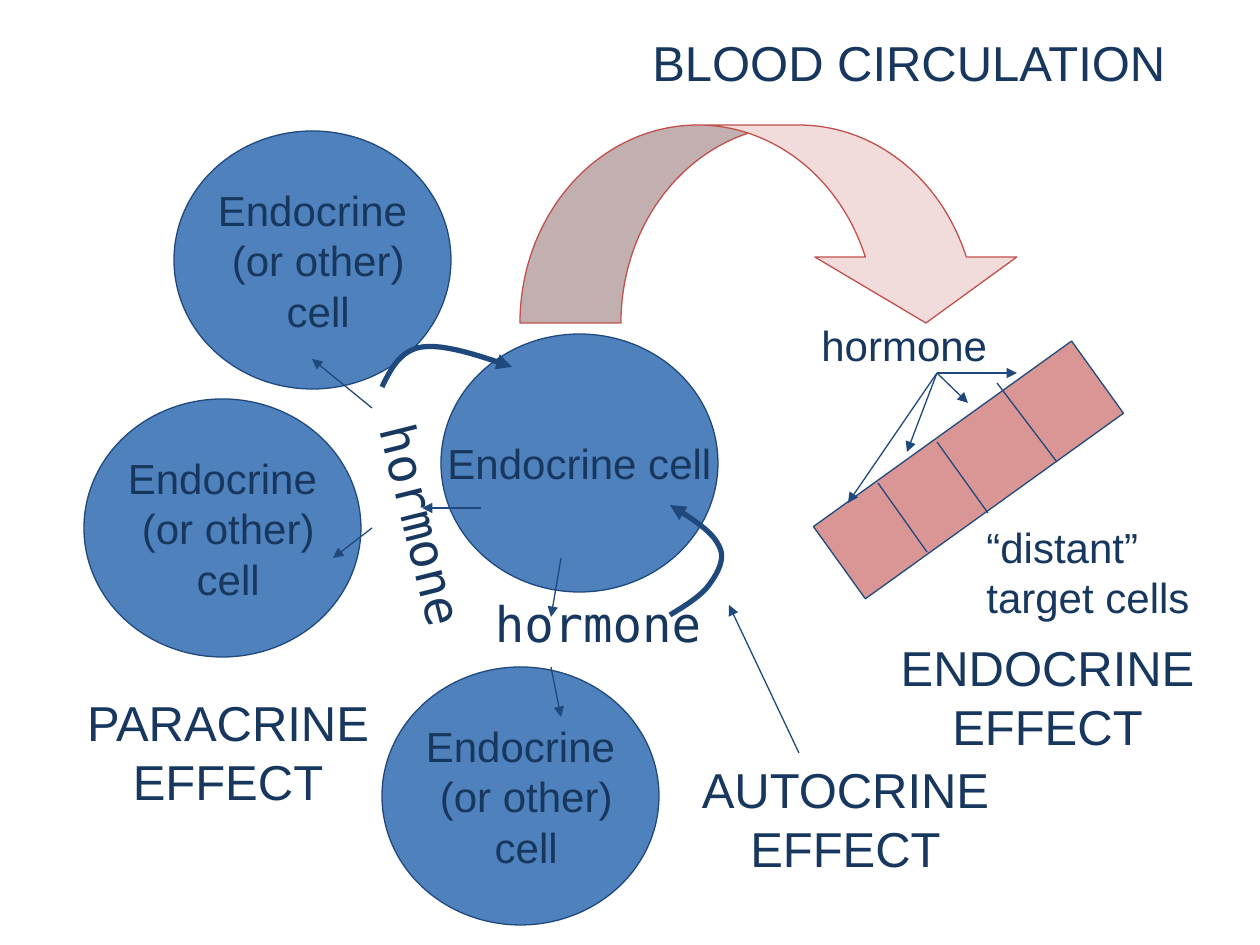
import dataclasses

import pptx
import pptx.dml.color
import pptx.enum.shapes
import pptx.enum.text
import pptx.oxml.ns
import pptx.util
from lxml import etree

EMU_PER_PX = 914400 / 126
SHAPES = pptx.enum.shapes.MSO_SHAPE
ALIGN = pptx.enum.text.PP_ALIGN
ANCHOR = pptx.enum.text.MSO_ANCHOR


@dataclasses.dataclass(frozen=True)
class Theme:
    text: str = "17375E"
    outline: str = "1F497D"
    cell: str = "4F81BD"
    target: str = "D99694"
    blood: str = "F2DCDB"
    blood_outline: str = "C0504D"
    font: str = "Arial"
    hormone_font: str = "DejaVu Sans Mono"
    body: int = 24
    heading: int = 28
    thin: float = 0.75
    thick: float = 3


THEME = Theme()
CELL_SIZE = (277, 258)
OTHER_CELL = ["Endocrine", " (or other)", " cell"]


def px(*lengths):
    return [round(length * EMU_PER_PX) for length in lengths]


def color(value):
    return pptx.dml.color.RGBColor.from_string(value)


def set_line(shape, line_color=THEME.outline, width=THEME.thin, arrow=False):
    shape.line.color.rgb = color(line_color)
    shape.line.width = pptx.util.Pt(width)
    if arrow:
        line = shape.line._get_or_add_ln()
        etree.SubElement(line, pptx.oxml.ns.qn("a:tailEnd"), type="triangle")


def write(shape, lines, size, font, align):
    frame = shape.text_frame
    frame.word_wrap = False
    frame.text = "\n".join(lines)
    for paragraph in frame.paragraphs:
        paragraph.alignment = align
        paragraph.font.name = font
        paragraph.font.size = pptx.util.Pt(size)
        paragraph.font.color.rgb = color(THEME.text)


def add_preset(slide, kind, box, fill, line_color=THEME.outline):
    shape = slide.shapes.add_shape(kind, *px(*box))
    shape.shadow.inherit = False
    shape.fill.solid()
    shape.fill.fore_color.rgb = color(fill)
    set_line(shape, line_color)
    return shape


def add_cell(slide, left, top, lines):
    cell = add_preset(slide, SHAPES.OVAL, (left, top, *CELL_SIZE), THEME.cell)
    cell.text_frame.vertical_anchor = ANCHOR.MIDDLE
    write(cell, lines, THEME.body, THEME.font, ALIGN.CENTER)


def add_label(slide, box, lines, size, font=THEME.font, align=ALIGN.LEFT, rotation=0):
    label = slide.shapes.add_textbox(*px(*box))
    label.rotation = rotation
    write(label, lines, size, font, align)


def add_line(slide, start, end, arrow=False):
    connector = slide.shapes.add_connector(
        pptx.enum.shapes.MSO_CONNECTOR.STRAIGHT, *px(*start, *end))
    set_line(connector, arrow=arrow)
    etree.SubElement(connector._element.spPr, pptx.oxml.ns.qn("a:effectLst"))


def curve_points(controls, steps=12):
    for first in range(0, len(controls) - 1, 3):
        segment = controls[first:first + 4]
        for step in range(1, steps + 1):
            t = step / steps
            weights = ((1 - t) ** 3, 3 * t * (1 - t) ** 2, 3 * t * t * (1 - t), t ** 3)
            yield px(*(sum(w * point[axis] for w, point in zip(weights, segment))
                       for axis in (0, 1)))


def add_curved_arrow(slide, controls):
    builder = slide.shapes.build_freeform(*px(*controls[0]))
    builder.add_line_segments(curve_points(controls), close=False)
    curve = builder.convert_to_shape()
    curve.shadow.inherit = False
    curve.fill.background()
    set_line(curve, width=THEME.thick, arrow=True)


def add_endocrine_part(slide):
    blood = add_preset(slide, SHAPES.CURVED_DOWN_ARROW, (520, 125, 507, 198),
                       THEME.blood, THEME.blood_outline)
    for index, value in enumerate((0.51, 1.02, 0.333)):
        blood.adjustments[index] = value
    target = add_preset(slide, SHAPES.RECTANGLE, (924, 311, 89, 318), THEME.target)
    target.rotation = 54.3
    for start, end in [((988, 513), (937, 442)), ((878, 483), (927, 552)),
                       ((997, 383), (1057, 462))]:
        add_line(slide, start, end)
    add_label(slide, (974, 515, 231, 115), ["“distant”", "target cells"], THEME.body)
    add_label(slide, (640, 26, 543, 72), ["BLOOD CIRCULATION"], THEME.heading)
    add_label(slide, (809, 313, 192, 63), ["hormone"], THEME.body)
    for tip in [(1017, 373), (968, 403), (907, 452), (848, 503)]:
        add_line(slide, (937, 373), tip, arrow=True)


def add_local_part(slide):
    for left, top in [(84, 399), (174, 131), (382, 667)]:
        add_cell(slide, left, top, OTHER_CELL)
    for left, top, rotation in [(468, 587, 0), (290, 487, 76)]:
        add_label(slide, (left, top, 260, 77), ["hormone"], THEME.heading,
                  THEME.hormone_font, ALIGN.CENTER, rotation)
    for start, end in [((372, 408), (312, 359)), ((372, 528), (333, 558)),
                       ((551, 667), (561, 717)), ((561, 558), (551, 617)),
                       ((481, 508), (422, 508)), ((799, 753), (729, 605))]:
        add_line(slide, start, end, arrow=True)
    add_curved_arrow(slide, [(670, 615), (685, 606), (701, 596), (709, 585), (718, 573),
                             (726, 558), (719, 546), (713, 532), (693, 519), (670, 505)])
    add_curved_arrow(slide, [(382, 387), (391, 368), (401, 350), (422, 347),
                             (444, 344), (478, 355), (512, 367)])


def main():
    presentation = pptx.Presentation()
    presentation.slide_width, presentation.slide_height = px(1260, 945)
    slide = presentation.slides.add_slide(presentation.slide_layouts[6])
    add_cell(slide, 441, 334, ["Endocrine cell"])
    add_endocrine_part(slide)
    add_local_part(slide)
    for left, top, width, name in [(888, 631, 319, "ENDOCRINE"), (74, 686, 308, "PARACRINE"),
                                   (689, 753, 313, "AUTOCRINE")]:
        add_label(slide, (left, top, width, 130), [name, "EFFECT"], THEME.heading,
                  align=ALIGN.CENTER)
    presentation.save("out.pptx")


if __name__ == "__main__":
    main()
